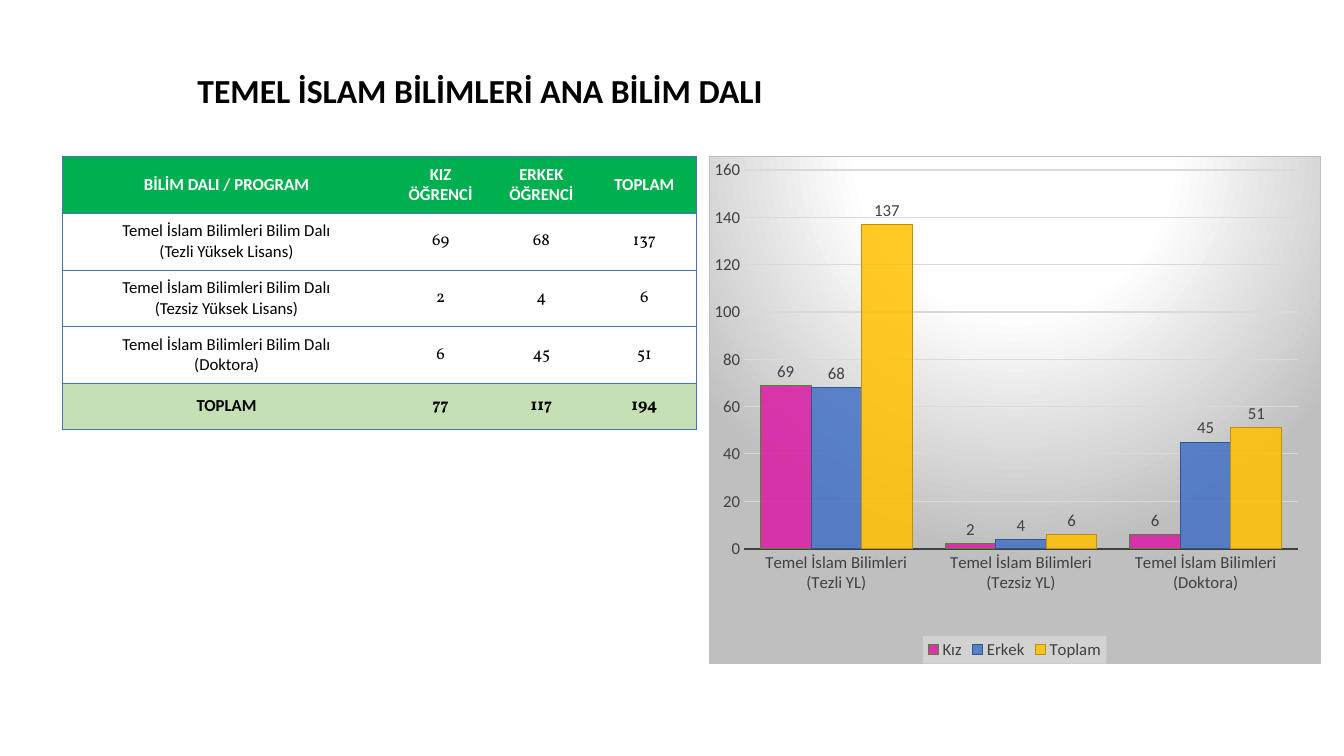
import pptx
import pptx.chart.data
import pptx.dml.color
import pptx.enum.chart
import pptx.enum.text
import pptx.oxml
import pptx.oxml.ns
import pptx.util

Cm = pptx.util.Cm
Pt = pptx.util.Pt
RGBColor = pptx.dml.color.RGBColor
qn = pptx.oxml.ns.qn

BLACK = RGBColor(0x00, 0x00, 0x00)
WHITE = RGBColor(0xFF, 0xFF, 0xFF)
GREEN = RGBColor(0x00, 0xB0, 0x50)
PALE_GREEN = RGBColor(0xC5, 0xE0, 0xB4)
BLUE = RGBColor(0x44, 0x72, 0xC4)
DARK_GREY = RGBColor(0x40, 0x40, 0x40)
GRID_GREY = RGBColor(0xD9, 0xD9, 0xD9)
PINK = RGBColor(0xD9, 0x1B, 0xA3)
GOLD = RGBColor(0xFF, 0xC0, 0x00)
DARK_GREEN = RGBColor(0x54, 0x82, 0x35)
DARK_BLUE = RGBColor(0x2F, 0x55, 0x97)
DARK_GOLD = RGBColor(0xBF, 0x90, 0x00)


def xml(text):
    """Parse a fragment whose root holds the placeholder NS for its namespaces."""
    return pptx.oxml.parse_xml(text.replace("NS", pptx.oxml.ns.nsdecls("a", "c"), 1))


def style_font(font, size, color, bold=False, name="Calibri"):
    font.name = name
    font.size = Pt(size)
    font.bold = bold
    font.color.rgb = color


prs = pptx.Presentation()
prs.slide_width = Cm(33.87)
prs.slide_height = Cm(19.05)
s = prs.slides.add_slide(prs.slide_layouts[5])

# Title
title = s.shapes.title
title.left, title.top, title.width, title.height = Cm(4.72), Cm(1.63), Cm(18.8), Cm(2.31)
tf = title.text_frame
tf.word_wrap = True
tf.auto_size = pptx.enum.text.MSO_AUTO_SIZE.NONE
tf.vertical_anchor = pptx.enum.text.MSO_ANCHOR.TOP
p = tf.paragraphs[0]
p.alignment = pptx.enum.text.PP_ALIGN.LEFT
r = p.add_run()
r.text = "TEMEL İSLAM BİLİMLERİ ANA BİLİM DALI"
style_font(r.font, 24, BLACK, True)

# Student table
PROGRAM = "Temel İslam Bilimleri Bilim Dalı"
rows = [
    ["BİLİM DALI / PROGRAM", "KIZ ÖĞRENCİ", "ERKEK ÖĞRENCİ", "TOPLAM"],
    [PROGRAM + "\n(Tezli Yüksek Lisans)", "69", "68", "137"],
    [PROGRAM + "\n(Tezsiz Yüksek Lisans)", "2", "4", "6"],
    [PROGRAM + "\n(Doktora)", "6", "45", "51"],
    ["TOPLAM", "77", "117", "194"],
]
last_row, last_col = len(rows) - 1, len(rows[0]) - 1
table = s.shapes.add_table(len(rows), len(rows[0]), Cm(1.57), Cm(3.94), Cm(15.98), Cm(6.88)).table
for column, width in zip(table.columns, (8.28, 2.51, 2.57, 2.62)):
    column.width = Cm(width)
for i, row in enumerate(rows):
    table.rows[i].height = Cm(1.15 if i == last_row else 1.43)
    for j, text in enumerate(row):
        cell = table.cell(i, j)
        cell.vertical_anchor = pptx.enum.text.MSO_ANCHOR.MIDDLE
        cell.margin_left = cell.margin_right = Cm(0.38)
        cell.margin_top = cell.margin_bottom = Cm(0.13)
        if i in (0, last_row):
            cell.fill.solid()
            cell.fill.fore_color.rgb = PALE_GREEN if i else GREEN
        else:
            cell.fill.background()
        for k, line in enumerate(text.split("\n")):
            p = cell.text_frame.add_paragraph() if k else cell.text_frame.paragraphs[0]
            p.alignment = pptx.enum.text.PP_ALIGN.CENTER
            r = p.add_run()
            r.text = line
            style_font(r.font, 12, BLACK if i else WHITE, i in (0, last_row),
                       "Vollkorn" if i and j else "Calibri")
        shown = {"L": j == 0, "R": j == last_col, "T": True, "B": True}
        for n, (side, visible) in enumerate(shown.items()):
            fill = f'<a:solidFill><a:srgbClr val="{BLUE}"/></a:solidFill>' if visible else "<a:noFill/>"
            border = xml(f'<a:ln{side} NS w="6350">{fill}</a:ln{side}>')
            cell._tc.get_or_add_tcPr().insert(n, border)

# Student chart
data = pptx.chart.data.CategoryChartData()
data.categories = [f"Temel İslam Bilimleri ({level})" for level in ("Tezli YL", "Tezsiz YL", "Doktora")]
for j, name in enumerate(("Kız", "Erkek", "Toplam"), start=1):
    data.add_series(name, [int(row[j]) for row in rows[1:last_row]])
chart = s.shapes.add_chart(pptx.enum.chart.XL_CHART_TYPE.COLUMN_CLUSTERED,
                           Cm(17.86), Cm(3.94), Cm(15.42), Cm(12.8), data).chart
style_font(chart.font, 10, BLACK)
chart.has_title = False

plot = chart.plots[0]
plot.gap_width = 65
plot.overlap = 0
plot.vary_by_categories = False
plot.has_data_labels = True
labels = plot.data_labels
labels.show_value = True
labels.position = pptx.enum.chart.XL_LABEL_POSITION.OUTSIDE_END
style_font(labels.font, 12, DARK_GREY)

bar_colors = [(PINK, DARK_GREEN), (BLUE, DARK_BLUE), (GOLD, DARK_GOLD)]
for series, ser, (fill, outline) in zip(plot.series, chart.element.iter(qn("c:ser")), bar_colors):
    series.invert_if_negative = False
    series.format.fill.solid()
    series.format.fill.fore_color.rgb = fill
    series.format.line.color.rgb = outline
    series.format.line.width = Pt(0.75)
    ser.find(".//" + qn("a:srgbClr")).append(xml('<a:alpha NS val="85000"/>'))

for axis in (chart.category_axis, chart.value_axis):
    axis.major_tick_mark = axis.minor_tick_mark = pptx.enum.chart.XL_TICK_MARK.NONE
    style_font(axis.tick_labels.font, 12, DARK_GREY)
chart.category_axis.format.line.color.rgb = DARK_GREY
chart.category_axis.format.line.width = Pt(1.5)
values = chart.value_axis
values.minimum_scale, values.maximum_scale, values.major_unit = 0, 160, 20
values.format.line.fill.background()
values.has_major_gridlines = True
values.major_gridlines.format.line.color.rgb = GRID_GREY
values.major_gridlines.format.line.width = Pt(0.75)

chart.has_legend = True
chart.legend.position = pptx.enum.chart.XL_LEGEND_POSITION.BOTTOM
chart.legend.include_in_layout = False
style_font(chart.legend.font, 12, DARK_GREY)
chart.element.find(".//" + qn("c:legend")).find(qn("c:overlay")).addnext(xml(
    '<c:spPr NS><a:solidFill><a:srgbClr val="F2F2F2"><a:alpha val="39000"/></a:srgbClr>'
    '</a:solidFill><a:ln><a:noFill/></a:ln></c:spPr>'))

# Plot position and radial chart background
plot_area = chart.element.find(".//" + qn("c:plotArea"))
for layout in plot_area.findall(qn("c:layout")):
    plot_area.remove(layout)
plot_area.insert(0, xml(
    '<c:layout NS><c:manualLayout><c:layoutTarget val="inner"/>'
    '<c:xMode val="edge"/><c:yMode val="edge"/><c:x val="0.057"/><c:y val="0.026"/>'
    '<c:w val="0.907"/><c:h val="0.747"/></c:manualLayout></c:layout>'))
chart.element.find(qn("c:chart")).addnext(xml(
    '<c:spPr NS><a:gradFill><a:gsLst>'
    '<a:gs pos="0"><a:srgbClr val="FFFFFF"/></a:gs>'
    '<a:gs pos="39000"><a:srgbClr val="FFFFFF"/></a:gs>'
    '<a:gs pos="100000"><a:srgbClr val="BFBFBF"/></a:gs></a:gsLst>'
    '<a:path path="circle"><a:fillToRect l="50000" t="-80000" r="50000" b="180000"/></a:path>'
    '</a:gradFill><a:ln w="9525"><a:solidFill><a:srgbClr val="BFBFBF"/></a:solidFill></a:ln></c:spPr>'))

prs.save("out.pptx")
